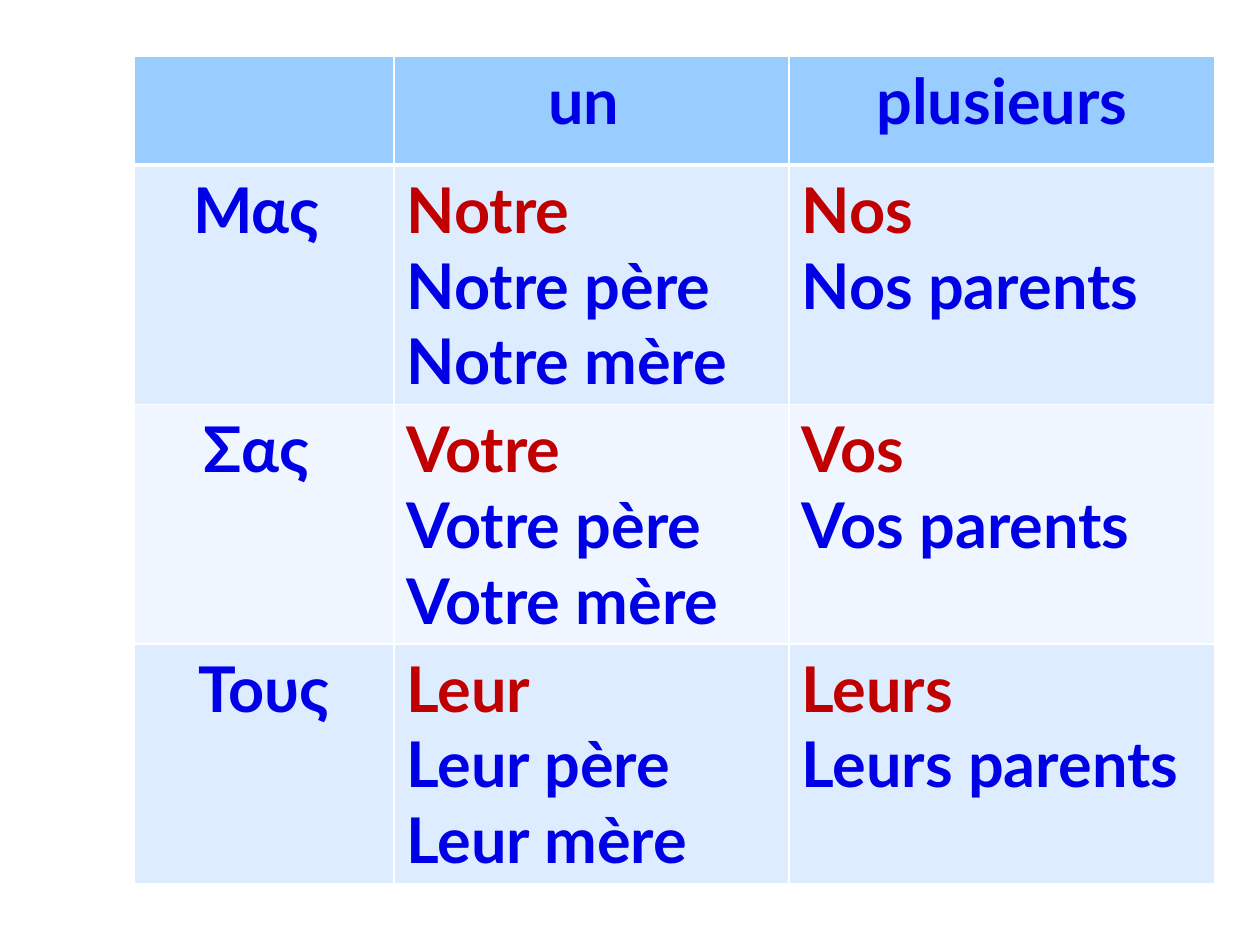
from lxml.etree import SubElement
from pptx import Presentation
from pptx.dml.color import RGBColor
from pptx.enum.text import PP_ALIGN as Align
from pptx.oxml.ns import qn
from pptx.util import Pt

PX = 914400 / 126
BLUE, RED, WHITE = "0000E6", "C00000", "FFFFFF"
HEADER_FILL, ODD_FILL, EVEN_FILL = "99CCFF", "DEECFF", "EFF6FF"


def px(length):
    return round(length * PX)


def add_border(cell, side, points):
    line = SubElement(cell._tc.get_or_add_tcPr(), qn(f"a:{side}"), w=str(Pt(points)))
    fill = SubElement(line, qn("a:solidFill"))
    SubElement(fill, qn("a:srgbClr"), val=WHITE)


possessives = [
    ["", "un ", "plusieurs"],
    ["Μας ", "Notre\nNotre père\nNotre mère", "Nos\nNos parents"],
    ["Σας ", "Votre\nVotre père\nVotre mère", "Vos\nVos parents"],
    ["Τους", "Leur\nLeur père\nLeur mère", "Leurs\nLeurs parents"],
]
column_widths = [260, 395, 426]
row_heights = [109, 239, 239, 239]

prs = Presentation()
prs.slide_width, prs.slide_height = px(1260), px(945)
slide = prs.slides.add_slide(prs.slide_layouts[6])

grid = slide.shapes.add_table(
    len(row_heights), len(column_widths),
    px(134), px(56), px(sum(column_widths)), px(sum(row_heights)),
).table
grid.horz_banding = False
for column, width in zip(grid.columns, column_widths):
    column.width = px(width)
for row, height in zip(grid.rows, row_heights):
    row.height = px(height)

for r, texts in enumerate(possessives):
    row_fill = HEADER_FILL if r == 0 else ODD_FILL if r % 2 else EVEN_FILL
    for c, text in enumerate(texts):
        cell = grid.cell(r, c)
        heading = r == 0 or c == 0
        for side in ("lnL", "lnR", "lnT", "lnB"):
            thick = (r, side) in ((0, "lnB"), (1, "lnT"))
            add_border(cell, side, 3 if thick else 1)
        cell.fill.solid()
        cell.fill.fore_color.rgb = RGBColor.from_string(row_fill)
        cell.text_frame.text = text
        for p, paragraph in enumerate(cell.text_frame.paragraphs):
            paragraph.alignment = Align.CENTER if heading else Align.LEFT
            for run in paragraph.runs:
                run.font.name = "Lato"
                run.font.size = Pt(36)
                run.font.bold = True
                colour = RED if p == 0 and not heading else BLUE
                run.font.color.rgb = RGBColor.from_string(colour)

prs.save("out.pptx")
